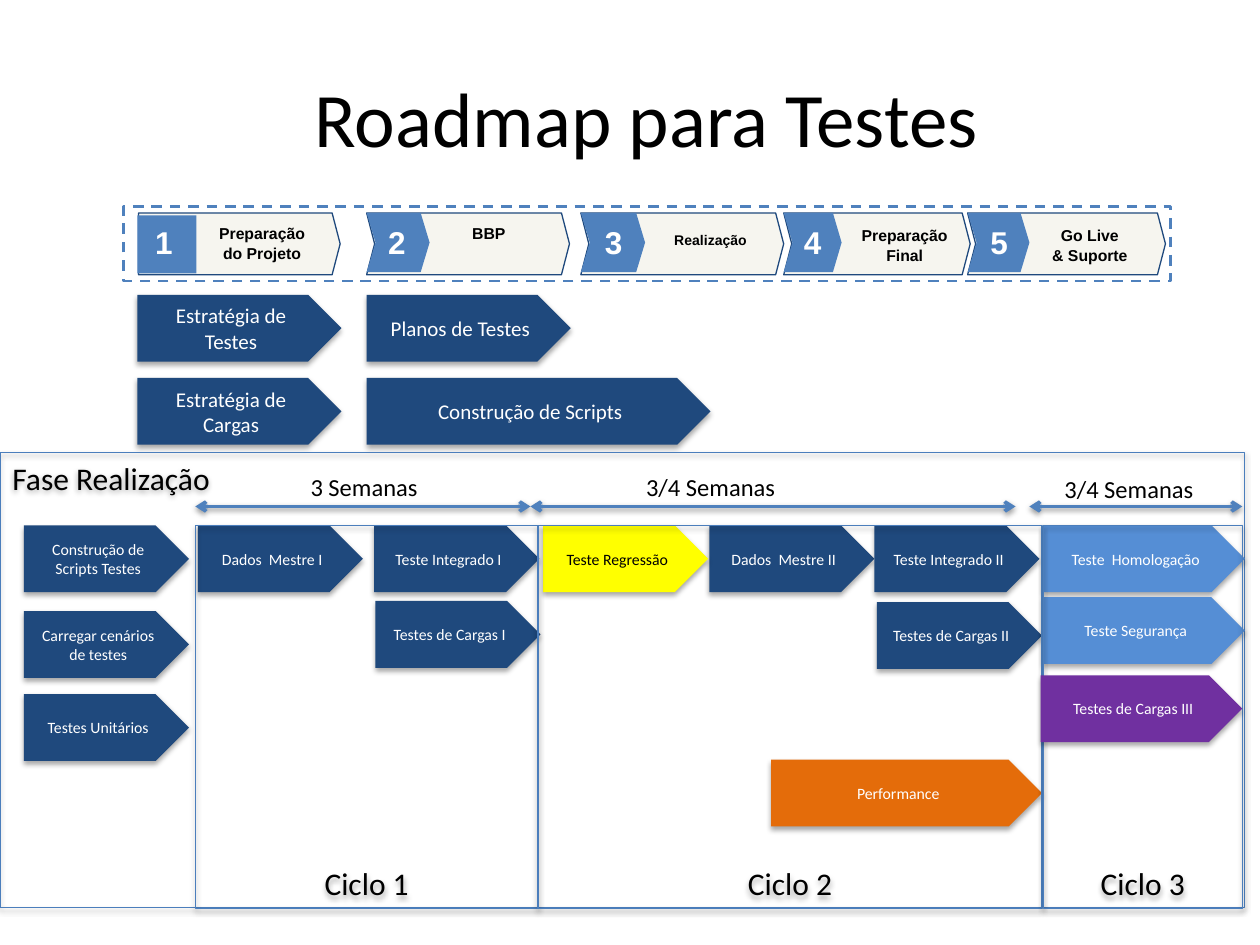
from lxml import etree
from pptx import Presentation
from pptx import util as u
from pptx.dml.color import RGBColor
from pptx.enum import dml, shapes, text
from pptx.oxml import ns

HUES = {
    "navy": "1F497D", "blue": "4F81BD", "edge": "4B7EBC", "sky": "558ED5",
    "sun": "FFFF00", "fire": "E46C0A", "plum": "7030A0", "sand": "EEECE1",
    "white": "FFFFFF", "black": "000000",
}
KINDS = shapes.MSO_SHAPE
TOP, MID, LOW = (text.MSO_ANCHOR.TOP, text.MSO_ANCHOR.MIDDLE,
                 text.MSO_ANCHOR.BOTTOM)
LEFT, CENTER = text.PP_ALIGN.LEFT, text.PP_ALIGN.CENTER
TAG = 0.53


def hue(name):
    return RGBColor.from_string(HUES[name])


def node(root, name, **attrs):
    return etree.SubElement(root, ns.qn(name), attrs)


def shade(props, alpha, dist):
    glow = props.find(ns.qn("a:effectLst"))
    if glow is None:
        glow = node(props, "a:effectLst")
    drop = node(glow, "a:outerShdw", blurRad=str(u.Pt(3.1)),
                dist=str(u.Pt(dist)), dir="5400000", rotWithShape="0")
    tone = node(drop, "a:srgbClr", val=HUES["black"])
    node(tone, "a:alpha", val=str(alpha * 1000))


def fit(box):
    return [u.Inches(part) for part in box]


def write(shape, lines, size, color="white", font="Calibri", bold=False,
          align=CENTER, anchor=MID, wrap=True):
    frame = shape.text_frame
    frame.word_wrap = wrap
    frame.vertical_anchor = anchor
    frame.text = lines
    for para in frame.paragraphs:
        para.alignment = align
        para.font.size = u.Pt(size)
        para.font.name = font
        para.font.bold = bold
        para.font.color.rgb = hue(color)
    return frame


def form(slide, kind, box, fill=None, line=None, width=0.75, adj=None):
    shape = slide.shapes.add_shape(kind, *fit(box))
    shape.shadow.inherit = False
    if adj:
        shape.adjustments[0] = adj
    if fill:
        shape.fill.solid()
        shape.fill.fore_color.rgb = hue(fill)
    else:
        shape.fill.background()
    if line:
        shape.line.color.rgb = hue(line)
        shape.line.width = u.Pt(width)
    else:
        shape.line.fill.background()
    return shape


def label(slide, box, lines, size, color="black", **style):
    shape = slide.shapes.add_textbox(*fit(box))
    return write(shape, lines, size, color, **style)


def tight(slide, box, lines, size, color, anchor):
    frame = label(slide, box, lines, size, color, font="Arial", bold=True,
                  anchor=anchor, wrap=False)
    frame.margin_left = frame.margin_right = 0
    frame.margin_top = frame.margin_bottom = 0
    for rank, para in enumerate(frame.paragraphs):
        para.line_spacing = 0.9
        if rank:
            para.space_before = u.Pt(size * 0.2)


def tag(slide, box, words, size=9, fill="navy", color="white"):
    shape = form(slide, KINDS.PENTAGON, box, fill)
    shade(shape._element.spPr, 35, 1.8)
    write(shape, words, size, color)


def panel(slide, box, words, align, anchor):
    shape = form(slide, KINDS.RECTANGLE, box, line="edge")
    shade(shape._element.spPr, 35, 1.8)
    write(shape, words, 18, "black", align=align, anchor=anchor)


def span(slide, start, end, y):
    line = slide.shapes.add_connector(
        shapes.MSO_CONNECTOR.STRAIGHT, *fit((start, y, end, y)))
    line.line.color.rgb = hue("blue")
    line.line.width = u.Pt(2)
    props = line._element.spPr
    stroke = props.find(ns.qn("a:ln"))
    node(stroke, "a:headEnd", type="arrow")
    node(stroke, "a:tailEnd", type="arrow")
    shade(props, 38, 1.6)


def title(slide, box):
    frame = label(slide, box, "Roadmap para Testes", 44)
    frame.margin_left = u.Inches(0.36)


def phase(slide, box, num, words, head, spot, mid, drop, size):
    x, y, w, h = box
    first = num == "1"
    body = form(slide, KINDS.PENTAGON if first else KINDS.CHEVRON, box,
                "sand", "navy", adj=0.13)
    tone = body._element.spPr.find(ns.qn("a:solidFill"))[0]
    node(tone, "a:alpha", val="50000")
    if first:
        form(slide, KINDS.RECTANGLE, (x - 0.01, y + 0.02, head, 0.46), "blue")
    else:
        form(slide, KINDS.CHEVRON, (x, y, head, 0.47), "blue", adj=0.15)
    tight(slide, (x + spot - 0.14, y + 0.04, 0.28, 0.42), num, 18, "white", MID)
    tight(slide, (x + mid - 0.45, y + drop, 0.9, 0.3), words, size, "black", TOP)


def phases(slide, box):
    x, y, w, h = box
    frame = form(slide, KINDS.RECTANGLE, box, line="blue", width=1.5)
    frame.line.dash_style = dml.MSO_LINE.DASH
    rows = [
        (0.12, 1.6, "Preparação\ndo Projeto", 0.47, 0.2, 0.98, 0.1, 9),
        (1.93, 1.61, "BBP", 0.5, 0.24, 0.97, 0.1, 9),
        (3.63, 1.61, "Realização", 0.51, 0.26, 1.03, 0.16, 8),
        (5.24, 1.48, "Preparação\nFinal", 0.46, 0.23, 0.96, 0.12, 9),
        (6.7, 1.57, "Go Live\n& Suporte", 0.49, 0.25, 0.97, 0.12, 9),
    ]
    for num, (left, wide, words, *rest) in enumerate(rows, 1):
        phase(slide, (x + left, y + 0.05, wide, 0.49), str(num), words, *rest)


def plans(slide, box):
    x, y, w, h = box
    step = h - TAG
    for col, row, wide, words in [
        (0, 0, 1.62, "Estratégia de Testes"),
        (0, 1, 1.62, "Estratégia de Cargas"),
        (1.82, 0, 1.62, "Planos de Testes"),
        (1.82, 1, 2.73, "Construção de Scripts"),
    ]:
        tag(slide, (x + col, y + row * step, wide, TAG), words, 12)


def stage(slide, box):
    x, y, w, h = box
    panel(slide, box, "Fase Realização", LEFT, TOP)
    base = 0.58
    for left, drop, wide, words, *hues in [
        (0.19, 0, 1.31, "Construção de Scripts Testes"),
        (0.19, 0.68, 1.31, "Carregar cenários de testes"),
        (0.19, 1.34, 1.31, "Testes Unitários"),
        (1.57, 0, 1.31, "Dados  Mestre I"),
        (2.97, 0, 1.31, "Teste Integrado I"),
        (2.98, 0.6, 1.31, "Testes de Cargas I"),
        (5.63, 0, 1.31, "Dados  Mestre II"),
        (6.94, 0, 1.31, "Teste Integrado II"),
        (6.96, 0.61, 1.31, "Testes de Cargas II"),
        (8.28, 0, 1.6, "Teste  Homologação", "sky"),
        (8.28, 0.57, 1.6, "Teste Segurança", "sky"),
        (4.31, 0, 1.31, "Teste Regressão", "sun", "black"),
        (6.12, 1.86, 2.15, "Performance", "fire"),
    ]:
        tag(slide, (x + left, y + base + drop, wide, TAG), words, 9, *hues)
    for start, end, left, drop, words in [
        (1.55, 4.21, 1.9, 0.11, "3 Semanas"),
        (4.21, 8.06, 4.65, 0.11, "3/4 Semanas"),
        (8.17, 9.86, 7.97, 0.12, "3/4 Semanas"),
    ]:
        span(slide, x + start, x + end, y + 0.43)
        label(slide, (x + left, y + drop, 1.98, 0.34), words, 14, anchor=TOP)
    for num, (left, wide) in enumerate([(1.55, 2.72), (4.27, 4), (8.28, 1.58)], 1):
        panel(slide, (x + left, y + base, wide, h - base + 0.01),
              f"Ciclo {num}", CENTER, LOW)
    tag(slide, (x + 8.26, y + 1.77, 1.6, TAG), "Testes de Cargas III", 9, "plum")


def main():
    deck = Presentation()
    deck.slide_width, deck.slide_height = u.Inches(10), u.Inches(7.5)
    slide = deck.slides.add_slide(deck.slide_layouts[6])
    title(slide, (0.5, 0.3, 9, 1.25))
    phases(slide, (0.98, 1.64, 8.31, 0.59))
    plans(slide, (1.09, 2.34, 4.55, 1.19))
    stage(slide, (0, 3.59, 9.88, 3.61))
    deck.save("out.pptx")


if __name__ == "__main__":
    main()
